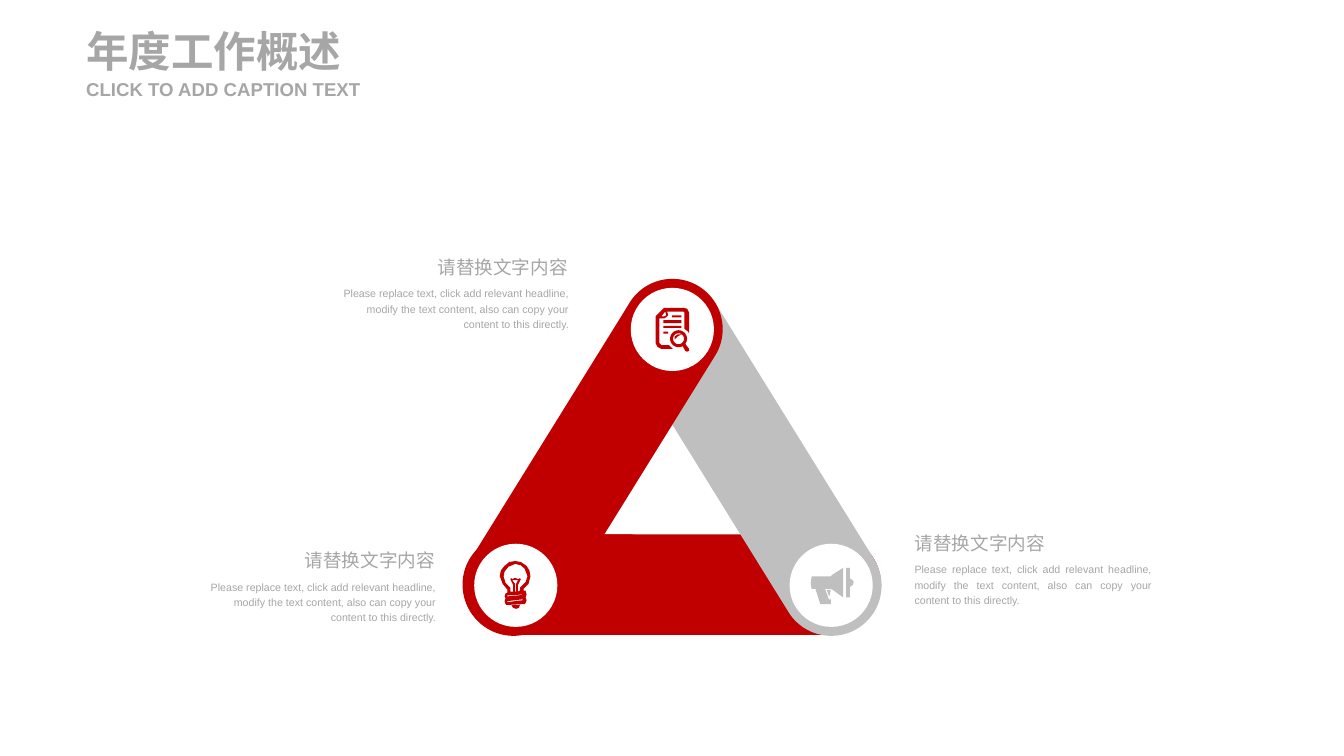
from math import cos, sin, pi
from pptx import Presentation
from pptx.dml.color import RGBColor
from pptx.enum.shapes import MSO_SHAPE
from pptx.enum.text import MSO_ANCHOR, PP_ALIGN
from pptx.util import Cm, Pt

RED, GREY, WHITE, TEXT = "C00000", "BFBFBF", "FFFFFF", "A6A6A6"
HEAD = "请替换文字内容"
BODY = ("Please replace text, click add relevant headline, modify the text "
        "content, also can copy your content to this directly.")

deck = Presentation()
deck.slide_width, deck.slide_height = Cm(35.71), Cm(20.09)
slide = deck.slides.add_slide(deck.slide_layouts[6])
shapes = slide.shapes


def paint(shape, color):
    shape.shadow.inherit = False
    shape.fill.solid()
    shape.fill.fore_color.rgb = RGBColor.from_string(color)
    shape.line.fill.background()


def write(text, x, y, w, h, size, align=PP_ALIGN.LEFT, bold=False):
    box = shapes.add_textbox(Cm(x), Cm(y), Cm(w), Cm(h))
    frame = box.text_frame
    frame.word_wrap = True
    para = frame.paragraphs[0]
    para.alignment = align
    run = para.add_run()
    run.text = text
    run.font.name, run.font.size, run.font.bold = "Arial", Pt(size), bold
    run.font.color.rgb = RGBColor.from_string(TEXT)
    return frame


# Triangle bars: left, top, length, turn, colour
bars = [
    (12.34, 14.2, 11.07, 0, RED),
    (14.63, 10.82, 10.69, 58.2, GREY),
    (10.41, 10.82, 10.69, -58.2, RED),
    (12.29, 14.2, 5.72, 0, RED),
]
for x, y, size, turn, color in bars:
    bar = shapes.add_shape(MSO_SHAPE.ROUNDED_RECTANGLE,
                           Cm(x), Cm(y), Cm(size), Cm(2.67))
    bar.adjustments[0] = 0.5
    bar.rotation = turn
    paint(bar, color)

# White discs on the corners
for x, y in [(16.76, 7.65), (12.6, 14.45), (20.98, 14.45)]:
    disc = shapes.add_shape(MSO_SHAPE.OVAL, Cm(x), Cm(y), Cm(2.21), Cm(2.21))
    paint(disc, WHITE)

# Icon outlines in hundredths of an inch; a circle is (x, y, radius)
page = [
    [(10, 0), (29, 0), (33, 1), (35, 5), (35, 27), (34, 25), (30, 22),
     (30, 5), (29, 4), (12, 4), (13, 7), (13, 8), (11, 10), (9, 11),
     (4, 11), (4, 37), (6, 39), (14, 39), (18, 43), (6, 43), (2, 41),
     (0, 37), (0, 9), (1, 8), (9, 0)],
    [(10, 4), (6, 9), (9, 9), (11, 8), (11, 7)],
    (24, 32.4, 8.9),
    (24, 32.4, 5.7),
    [(28.5, 40.5), (31, 45), (33, 46), (35, 45), (35, 43), (32, 39),
     (31.2, 38)],
    [(20, 33), (20, 30), (23, 28), (27, 28), (23, 30)],
]
for x, y, right, low in [(8, 25, 13, 27), (8, 19, 27, 21),
                         (8, 13, 27, 16), (17, 8, 27, 10)]:
    page.append([(x, y), (right, y), (right, low), (x, low)])
bulb = [
    [(16, 0), (22, 1), (28, 5), (31, 10), (32, 16), (30, 24), (25, 29),
     (25, 31), (27, 31), (28, 35), (27, 38), (28, 41), (27, 44), (26, 45),
     (7, 46), (6, 45), (5, 42), (6, 39), (5, 37), (6, 34), (8, 33),
     (8, 30), (3, 24), (0, 16), (1, 10), (5, 5), (10, 1)],
    [(16, 3), (22, 4.5), (26, 8), (29, 16), (27, 22), (22, 27), (21, 28),
     (21, 31), (19, 32), (19, 25), (22, 19), (21, 18), (19, 19), (17, 18),
     (15, 18), (13, 19), (12, 18), (11, 19), (14, 25), (14, 32), (11, 32),
     (11, 28), (6, 23), (4, 16), (5, 11), (9, 6)],
    [(19, 20), (13, 20), (16, 24), (16, 32), (17, 32), (17, 24)],
    [(12, 46.3), (21, 46), (20, 49), (17, 50), (14, 49)],
    [(8, 42), (24, 40), (24, 41), (8, 43)],
    [(8, 36), (24, 35), (24, 35.5), (8, 37)],
]
horn = [
    [(1, 9), (21, 9), (23, 7), (34, 0), (34, 31), (23, 23), (21, 22),
     (15, 22), (19, 33), (21, 33), (21, 38), (10, 38), (5, 22), (1, 22),
     (0, 16)],
    [(41, 11), (44, 13), (45, 15), (44, 18), (41, 20), (41, 31), (37, 31),
     (37, 0), (41, 0)],
    [(21, 23), (17, 23), (19, 29), (20, 29), (20, 27)],
]

# Icons
for icon, x, y, color in [(page, 17.42, 8.18, RED), (bulb, 13.28, 14.91, RED),
                          (horn, 21.54, 15.09, GREY)]:
    pen = None
    for part in icon:
        if isinstance(part, tuple):
            mid, level, r = part
            part = [(mid + r * cos(k * pi / 16), level + r * sin(k * pi / 16))
                    for k in range(32)]
        dots = [(a * 10, b * 10) for a, b in part]
        if pen is None:
            pen = shapes.build_freeform(*dots[0], scale=Cm(2.54) / 1000)
        else:
            pen.move_to(*dots[0])
        pen.add_line_segments(dots[1:], close=True)
    paint(pen.convert_to_shape(Cm(x), Cm(y)), color)

# Captions: head left and width, body left and width, top, alignments
captions = [
    (24.05, 4.09, 24.05, 6.81, 13.89, PP_ALIGN.LEFT, PP_ALIGN.JUSTIFY),
    (11.23, 4.11, 8.79, 6.58, 6.55, PP_ALIGN.RIGHT, PP_ALIGN.RIGHT),
    (7.26, 4.55, 5.26, 6.58, 14.35, PP_ALIGN.RIGHT, PP_ALIGN.RIGHT),
]
for x, w, left, wide, top, side, flow in captions:
    for frame in (write(HEAD, x, top, w, 0.91, 14, side),
                  write(BODY, left, top + 0.89, wide, 1.45, 8, flow)):
        frame.paragraphs[0].line_spacing = 1.2

# Title and subtitle
for text, y, h, size in [("年度工作概述", 0.66, 1.37, 32),
                         ("CLICK TO ADD CAPTION TEXT", 2.06, 0.61, 14)]:
    frame = write(text, 2.29, y, 7.8, h, size, bold=True)
    frame.vertical_anchor = MSO_ANCHOR.MIDDLE
    frame.margin_left = frame.margin_right = 0
    frame.margin_top = frame.margin_bottom = 0

deck.save("out.pptx")
